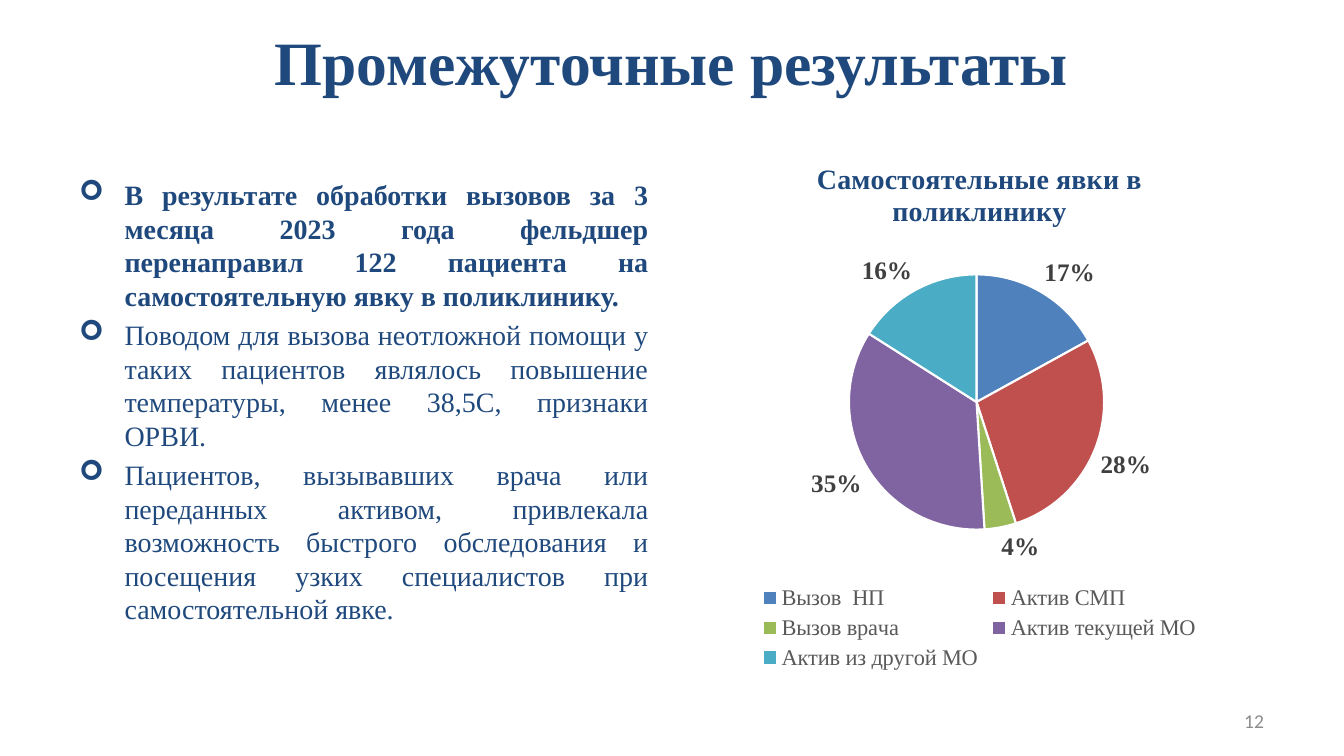
from lxml import etree
from pptx import Presentation
from pptx.chart.data import CategoryChartData
from pptx.dml.color import RGBColor
from pptx.enum.chart import XL_CHART_TYPE as ChartType, XL_LABEL_POSITION as LabelPosition
from pptx.enum.chart import XL_LEGEND_POSITION as LegendPosition
from pptx.enum.text import MSO_ANCHOR as Anchor, MSO_AUTO_SIZE as AutoSize, PP_ALIGN as Align
from pptx.oxml import parse_xml
from pptx.oxml.ns import nsdecls, qn
from pptx.util import Pt

NAVY = RGBColor(0x1F, 0x49, 0x7D)
WHITE = RGBColor(0xFF, 0xFF, 0xFF)
LABEL_GRAY = RGBColor(0x40, 0x40, 0x40)
LEGEND_GRAY = RGBColor(0x59, 0x59, 0x59)
NUMBER_GRAY = RGBColor(0x8C, 0x8C, 0x8C)
SERIF = "Times New Roman"
SANS = "Calibri"

TITLE = "Промежуточные результаты"
FINDINGS = [
    ("В результате обработки вызовов за 3 месяца 2023 года фельдшер перенаправил "
     "122 пациента на самостоятельную явку в поликлинику.", True),
    ("Поводом для вызова неотложной помощи у таких пациентов являлось повышение "
     "температуры, менее 38,5С, признаки ОРВИ.", False),
    ("Пациентов, вызывавших врача или переданных активом, привлекала возможность "
     "быстрого обследования и посещения узких специалистов при самостоятельной явке.", False),
]
CHART_TITLE = "Самостоятельные явки в поликлинику"
VISITS = [
    ("Вызов  НП", 17, RGBColor(0x4F, 0x81, 0xBD)),
    ("Актив СМП", 28, RGBColor(0xC0, 0x50, 0x4D)),
    ("Вызов врача", 4, RGBColor(0x9B, 0xBB, 0x59)),
    ("Актив текущей МО", 35, RGBColor(0x80, 0x64, 0xA2)),
    ("Актив из другой МО", 16, RGBColor(0x4B, 0xAC, 0xC6)),
]


def set_font(font, size, color, name=SERIF, bold=False):
    for key, value in {"size": Pt(size), "name": name, "bold": bold}.items():
        setattr(font, key, value)
    font.color.rgb = color


def set_frame(shape, box, anchor):
    for key, value in zip(("left", "top", "width", "height"), box):
        setattr(shape, key, Pt(value))
    frame = shape.text_frame
    formats = {
        "word_wrap": True, "auto_size": AutoSize.NONE, "vertical_anchor": anchor,
        "margin_left": Pt(8.6), "margin_right": Pt(8.6),
        "margin_top": Pt(4.3), "margin_bottom": Pt(4.3),
    }
    for key, value in formats.items():
        setattr(frame, key, value)
    return frame


def add_line(shape, box, text, align, **font_formats):
    para = set_frame(shape, box, Anchor.MIDDLE).paragraphs[0]
    para.alignment = align
    span = para.add_run()
    span.text = text
    set_font(span.font, **font_formats)


def add_findings(shape, box):
    frame = set_frame(shape, box, Anchor.TOP)
    for index, (text, bold) in enumerate(FINDINGS):
        para = frame.add_paragraph() if index else frame.paragraphs[0]
        para.alignment = Align.JUSTIFY
        para.space_before = Pt(4 if index else 0)
        properties = para._p.get_or_add_pPr()
        properties.set("marL", str(Pt(32.4)))
        properties.set("indent", str(-Pt(32.4)))
        etree.SubElement(properties, qn("a:buFont")).set("typeface", "Wingdings")
        etree.SubElement(properties, qn("a:buChar")).set("char", "➢")
        span = para.add_run()
        span.text = text
        set_font(span.font, 20, NAVY, bold=bold)


def place_plot(chart, **fractions):
    plot_area = chart._chartSpace.chart.plotArea
    for layout in plot_area.findall(qn("c:layout")):
        plot_area.remove(layout)
    values = "".join(f'<c:{key} val="{value}"/>' for key, value in fractions.items())
    plot_area.insert(0, parse_xml(
        f'<c:layout {nsdecls("c")}><c:manualLayout><c:layoutTarget val="inner"/>'
        f'<c:xMode val="edge"/><c:yMode val="edge"/>{values}</c:manualLayout></c:layout>'))


def add_visits_chart(page, box):
    data = CategoryChartData()
    data.categories = [name for name, _, _ in VISITS]
    data.add_series("Series 1", [share for _, share, _ in VISITS])
    chart = page.shapes.add_chart(ChartType.PIE, *map(Pt, box), data).chart
    chart.font.name = SANS
    chart.font.size = Pt(10)

    chart.has_title = True
    span = chart.chart_title.text_frame.paragraphs[0].add_run()
    span.text = CHART_TITLE
    set_font(span.font, 20, NAVY, bold=True)

    chart.has_legend = True
    chart.legend.position = LegendPosition.BOTTOM
    chart.legend.include_in_layout = False
    set_font(chart.legend.font, 16, LEGEND_GRAY)

    plot = chart.plots[0]
    plot.vary_by_categories = True
    plot.has_data_labels = True
    labels = plot.data_labels
    label_formats = {
        "show_percentage": True, "show_value": False, "number_format": "0%",
        "number_format_is_linked": False, "position": LabelPosition.OUTSIDE_END,
    }
    for key, value in label_formats.items():
        setattr(labels, key, value)
    set_font(labels.font, 18, LABEL_GRAY, bold=True)

    for index, (_, _, color) in enumerate(VISITS):
        slice_format = plot.series[0].points[index].format
        slice_format.fill.solid()
        slice_format.fill.fore_color.rgb = color
        slice_format.line.color.rgb = WHITE
        slice_format.line.width = Pt(1.5)
    place_plot(chart, x=0.28, y=0.25, w=0.43, h=0.48)


def build_results_page(deck):
    page = deck.slides.add_slide(deck.slide_layouts[1])
    title, body = page.placeholders
    add_line(title, (48, -1.5, 864, 90), TITLE, Align.CENTER, size=44, color=NAVY, bold=True)
    add_findings(body, (48, 122.4, 424, 360))
    add_visits_chart(page, (488, 100, 424, 382))
    number = page.shapes.add_textbox(0, 0, 0, 0)
    add_line(number, (688, 500.4, 224, 28.8), "12", Align.RIGHT,
             size=14, color=NUMBER_GRAY, name=SANS)


def main():
    deck = Presentation()
    deck.slide_width = Pt(960.5)
    deck.slide_height = Pt(540)
    build_results_page(deck)
    deck.save("out.pptx")


if __name__ == "__main__":
    main()
